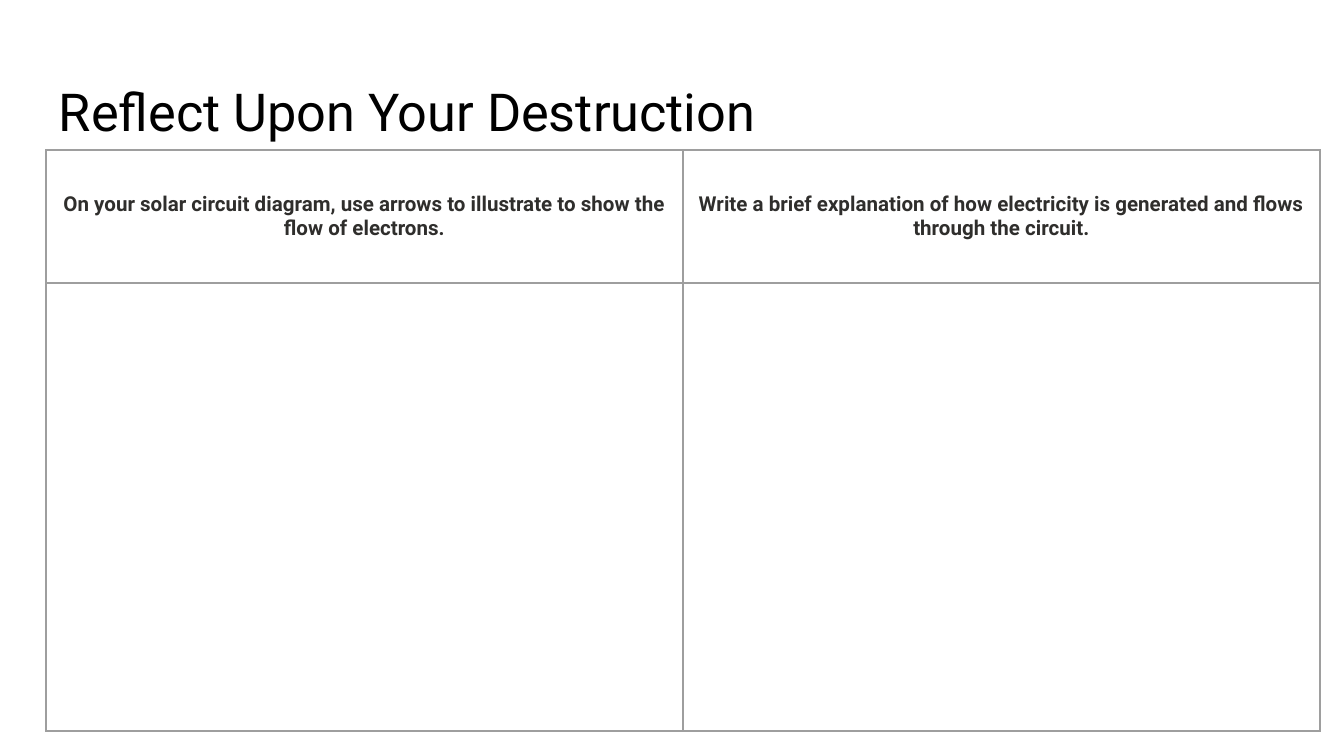
from lxml import etree
from pptx import Presentation
from pptx.dml.color import RGBColor
from pptx.enum.text import MSO_ANCHOR, MSO_AUTO_SIZE, PP_ALIGN
from pptx.oxml.ns import qn
from pptx.util import Pt

TOP, MIDDLE = MSO_ANCHOR.TOP, MSO_ANCHOR.MIDDLE
LEFT, CENTER = PP_ALIGN.LEFT, PP_ALIGN.CENTER
NO_AUTOFIT = MSO_AUTO_SIZE.NONE
PX = 914400 / 134.4
COLORS = {"title": "000000", "prompt": "2F2E2C", "border": "9E9E9E"}
MARGINS = ("margin_left", "margin_top", "margin_right", "margin_bottom")


def px(length):
    return round(length * PX)


def format_paragraph(paragraph, alignment, color, **font_values):
    paragraph.alignment = alignment
    paragraph.line_spacing = 1.0
    paragraph.space_before = Pt(0)
    font = paragraph.runs[0].font
    for name, value in {"name": "Roboto", **font_values}.items():
        setattr(font, name, value)
    font.color.rgb = RGBColor.from_string(COLORS[color])


presentation = Presentation()
presentation.slide_width = px(1344)
presentation.slide_height = px(756)
slide = presentation.slides.add_slide(presentation.slide_layouts[5])

# Title
title = slide.shapes.title
title.left, title.top, title.width, title.height = map(px, (46, 66, 1252, 84))
frame = title.text_frame
frame.text = "Reflect Upon Your Destruction"
frame.word_wrap = True
frame.auto_size = NO_AUTOFIT
frame.vertical_anchor = TOP
for margin in MARGINS:
    setattr(frame, margin, px(13))
format_paragraph(frame.paragraphs[0], LEFT, "title", size=Pt(28))

# Reflection table: prompts above, room for answers below
prompts = [
    "On your solar circuit diagram, use arrows to illustrate to show the flow of electrons.",
    "Write a brief explanation of how electricity is generated and flows through the circuit.",
]
column_width = 637
row_heights = [133, 448]
table = slide.shapes.add_table(
    len(row_heights), len(prompts), px(46), px(150),
    px(column_width * len(prompts)), px(sum(row_heights)),
).table
table.first_row = table.horz_banding = False
for column in table.columns:
    column.width = px(column_width)
for row, height in zip(table.rows, row_heights):
    row.height = px(height)

for cell, prompt in zip(table.rows[0].cells, prompts):
    cell.text = prompt
    format_paragraph(cell.text_frame.paragraphs[0], CENTER, "prompt", size=Pt(11), bold=True)

for cell in table.iter_cells():
    cell.vertical_anchor = MIDDLE
    for margin in MARGINS:
        setattr(cell, margin, px(13))
    properties = cell._tc.get_or_add_tcPr()
    for side in ("a:lnL", "a:lnR", "a:lnT", "a:lnB"):
        line = etree.SubElement(properties, qn(side), w=str(Pt(0.75)))
        fill = etree.SubElement(line, qn("a:solidFill"))
        etree.SubElement(fill, qn("a:srgbClr"), val=COLORS["border"])
    cell.fill.background()

presentation.save("out.pptx")
